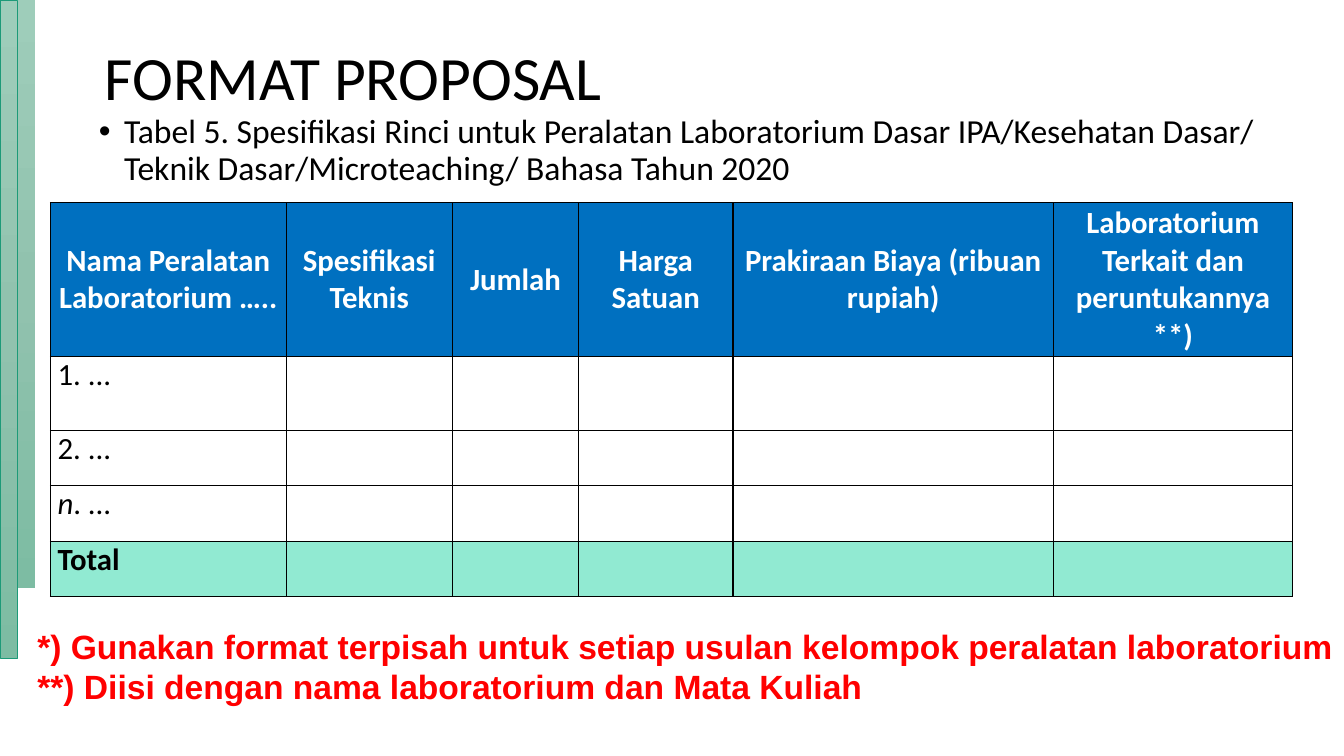
"""Builds the proposal format slide with the laboratory equipment table."""
import copy

import lxml.etree
import pptx
import pptx.dml.color
import pptx.enum.shapes
import pptx.enum.text
import pptx.oxml
import pptx.oxml.ns
import pptx.util

Cm = pptx.util.Cm
Pt = pptx.util.Pt
Align = pptx.enum.text.PP_ALIGN
Anchor = pptx.enum.text.MSO_ANCHOR
qn = pptx.oxml.ns.qn

COLORS = {
    "black": "000000", "white": "FFFFFF", "red": "FF0000",
    "header": "0070C0", "total": "91EAD2", "edge": "1D9A78",
    "bar_top": "9ECDBA", "bar_middle": "91C2AE", "bar_bottom": "7DBCA3",
}
COLUMN_WIDTHS = [5.94, 4.19, 3.18, 3.89, 8.08, 6.02]
ROW_HEIGHTS = [3.87, 1.86, 1.4, 1.4, 1.4]
HEADERS = [
    "Nama Peralatan Laboratorium …..", "Spesifikasi Teknis", "Jumlah",
    "Harga Satuan", "Prakiraan Biaya (ribuan rupiah)",
    "Laboratorium\nTerkait dan peruntukannya **)",
]
ROW_LABELS = ["1. ...", "2. ...", "n. ...", "Total"]


class SlideBuilder:
    """Holds the style and the slide being filled."""

    def __init__(self, slide, font="Calibri"):
        self.slide = slide
        self.font = font

    def color(self, name):
        return pptx.dml.color.RGBColor.from_string(COLORS[name])

    def style(self, paragraph, size, color="black", bold=False, font=None):
        paragraph.font.name = font or self.font
        paragraph.font.size = Pt(size)
        paragraph.font.bold = bold
        paragraph.font.color.rgb = self.color(color)

    def bar(self, left, height, edge=None):
        shape = self.slide.shapes.add_shape(
            pptx.enum.shapes.MSO_SHAPE.RECTANGLE, Cm(left), Cm(0), Cm(0.43), Cm(height))
        shape.shadow.inherit = False
        shape.fill.gradient()
        shape.fill.gradient_angle = 270
        first_stop = shape._element.spPr.find(".//" + qn("a:gs"))
        first_stop.addnext(copy.deepcopy(first_stop))
        names = ["bar_top", "bar_middle", "bar_bottom"]
        for index, (stop, name) in enumerate(zip(shape.fill.gradient_stops, names)):
            stop.position = index / 2
            stop.color.rgb = self.color(name)
        if edge:
            shape.line.color.rgb = self.color(edge)
            shape.line.width = Pt(0.5)
        else:
            shape.line.fill.background()

    def text(self, box, lines, size, color="black", bold=False, font=None,
             anchor=Anchor.TOP, line_spacing=None, bullet=False):
        frame = self.slide.shapes.add_textbox(*map(Cm, box)).text_frame
        frame.word_wrap = True
        frame.vertical_anchor = anchor
        frame.text = "\n".join(lines)
        for paragraph in frame.paragraphs:
            if bullet:
                self.bullet(paragraph)
            if line_spacing:
                paragraph.line_spacing = line_spacing
            self.style(paragraph, size, color, bold, font)

    def bullet(self, paragraph):
        properties = paragraph._p.get_or_add_pPr()
        properties.set("marL", str(Cm(0.64)))
        properties.set("indent", str(-Cm(0.64)))
        lxml.etree.SubElement(properties, qn("a:buFont")).set("typeface", "Arial")
        lxml.etree.SubElement(properties, qn("a:buChar")).set("char", "•")

    def borders(self, cell):
        properties = cell._tc.get_or_add_tcPr()
        for side in ("a:lnL", "a:lnR", "a:lnT", "a:lnB"):
            line = lxml.etree.SubElement(properties, qn(side), w=str(Pt(1)))
            fill = lxml.etree.SubElement(line, qn("a:solidFill"))
            lxml.etree.SubElement(fill, qn("a:srgbClr")).set("val", COLORS["black"])

    def cell(self, cell, text, fill=None, color="black", bold=False,
             align=Align.JUSTIFY, anchor=Anchor.TOP):
        self.borders(cell)
        if fill:
            cell.fill.solid()
            cell.fill.fore_color.rgb = self.color(fill)
        else:
            cell.fill.background()
        cell.margin_left = cell.margin_right = Cm(0.18)
        cell.margin_top = cell.margin_bottom = Cm(0)
        cell.vertical_anchor = anchor
        cell.text = text
        for paragraph in cell.text_frame.paragraphs:
            paragraph.alignment = align
            self.style(paragraph, 22, color, bold)

    def table(self, left, top):
        table = self.slide.shapes.add_table(
            len(ROW_HEIGHTS), len(COLUMN_WIDTHS), Cm(left), Cm(top),
            Cm(sum(COLUMN_WIDTHS)), Cm(sum(ROW_HEIGHTS))).table
        table.first_row = table.horz_banding = False
        for column, width in zip(table.columns, COLUMN_WIDTHS):
            column.width = Cm(width)
        for row, height in zip(table.rows, ROW_HEIGHTS):
            row.height = Cm(height)
        for index, header in enumerate(HEADERS):
            self.cell(table.cell(0, index), header, "header", "white", True,
                      Align.CENTER, Anchor.MIDDLE)
        for row, label in enumerate(ROW_LABELS, start=1):
            is_total = label == "Total"
            for column in range(len(COLUMN_WIDTHS)):
                self.cell(table.cell(row, column), "" if column else label,
                          "total" if is_total else None, bold=is_total)
        paragraph = table.cell(3, 0).text_frame.paragraphs[0]
        paragraph.runs[0].text = "n"
        paragraph.runs[0].font.italic = True
        paragraph.add_run().text = ". ..."


def main():
    presentation = pptx.Presentation()
    presentation.slide_width = Cm(33.87)
    presentation.slide_height = Cm(19.05)
    builder = SlideBuilder(presentation.slides.add_slide(presentation.slide_layouts[6]))
    builder.bar(0.46, 14.81)
    builder.bar(0, 16.59, edge="edge")
    builder.text((2.39, 0.18, 29.21, 3.68), ["FORMAT PROPOSAL"], 44,
                 anchor=Anchor.MIDDLE, line_spacing=0.9)
    builder.text((2.24, 2.77, 30.4, 2.77),
                 ["Tabel 5. Spesifikasi Rinci untuk Peralatan Laboratorium Dasar IPA/Kesehatan "
                  "Dasar/ Teknik Dasar/Microteaching/ Bahasa Tahun 2020"],
                 24, line_spacing=0.9, bullet=True)
    builder.table(1.27, 5.11)
    builder.text((0.69, 15.65, 33.18, 2.31),
                 ["*) Gunakan format terpisah untuk setiap usulan kelompok peralatan laboratorium",
                  "**) Diisi dengan nama laboratorium dan Mata Kuliah"],
                 24, "red", True, "Arial")
    presentation.save("out.pptx")


if __name__ == "__main__":
    main()
